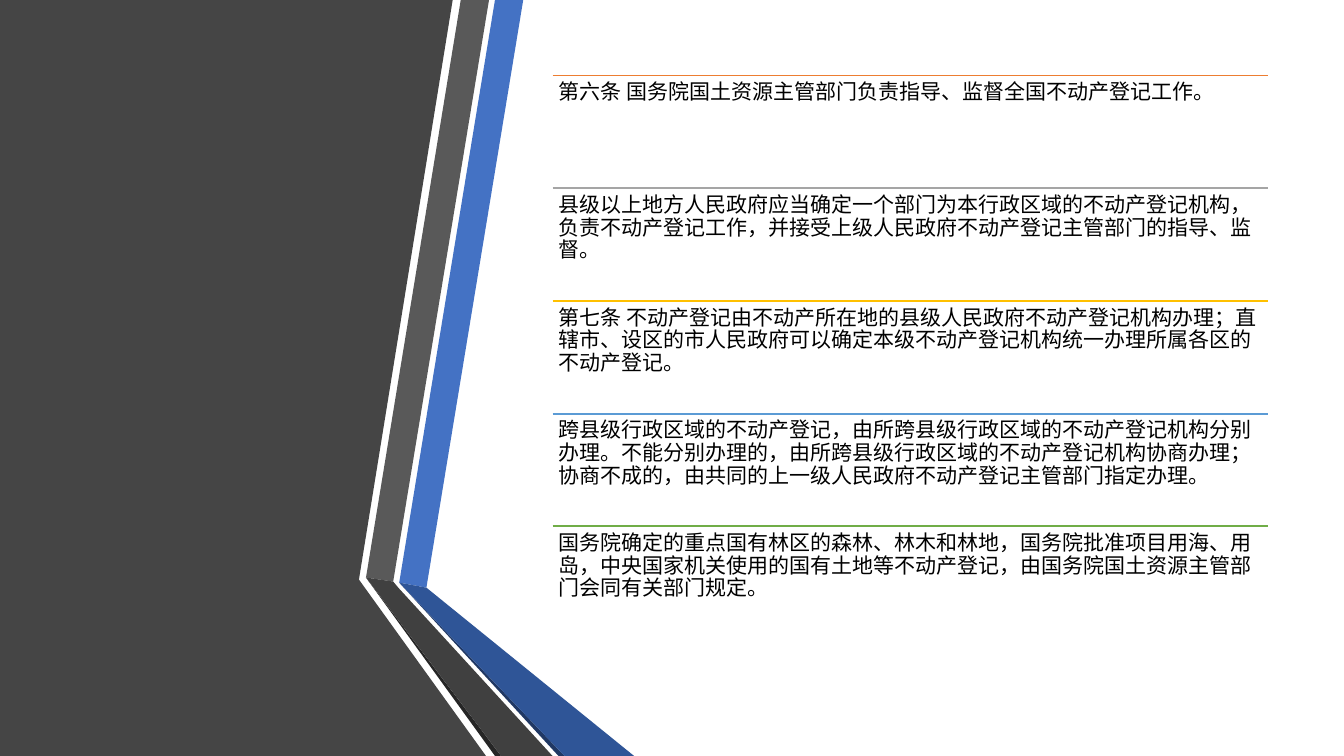
from dataclasses import dataclass

from lxml import etree
from pptx import Presentation
from pptx.dml.color import RGBColor
from pptx.enum.shapes import MSO_CONNECTOR
from pptx.oxml.ns import qn
from pptx.util import Inches, Pt

STRAIGHT = MSO_CONNECTOR.STRAIGHT


@dataclass(frozen=True)
class Theme:
    font: str = "Noto Sans CJK SC"
    text: str = "000000"
    text_size: float = 15
    rule_width: float = 1.25
    line_spacing: float = 0.9
    panel: str = "454545"
    blue: str = "4472C4"
    blue_fold: str = "2F5597"
    blue_edge: str = "203864"
    gray: str = "595959"
    gray_fold: str = "404040"
    gray_edge: str = "262626"


THEME = Theme()
WIDTH, HEIGHT = 13.33, 7.5

ARTICLES = [
    ("ED7D31", "第六条 国务院国土资源主管部门负责指导、监督全国不动产登记工作。"),
    ("A5A5A5", "县级以上地方人民政府应当确定一个部门为本行政区域的不动产登记机构，"
               "负责不动产登记工作，并接受上级人民政府不动产登记主管部门的指导、监督。"),
    ("FFC000", "第七条 不动产登记由不动产所在地的县级人民政府不动产登记机构办理；"
               "直辖市、设区的市人民政府可以确定本级不动产登记机构统一办理所属各区的不动产登记。"),
    ("5B9BD5", "跨县级行政区域的不动产登记，由所跨县级行政区域的不动产登记机构分别办理。"
               "不能分别办理的，由所跨县级行政区域的不动产登记机构协商办理；"
               "协商不成的，由共同的上一级人民政府不动产登记主管部门指定办理。"),
    ("70AD47", "国务院确定的重点国有林区的森林、林木和林地，国务院批准项目用海、用岛，"
               "中央国家机关使用的国有土地等不动产登记，"
               "由国务院国土资源主管部门会同有关部门规定。"),
]

# Corners of the folded ribbons, in inches
GRAY_LEFT, GRAY_RIGHT = (3.63, 5.73), (3.9, 5.77)
BLUE_LEFT, BLUE_RIGHT = (3.96, 5.78), (4.23, 5.83)
GRAY_FOOT, BLUE_FOOT = (4.97, HEIGHT), (5.6, HEIGHT)

RIBBONS = [
    (THEME.panel, [(0, 0), (4.49, 0), (3.56, 5.75), (4.82, HEIGHT), (0, HEIGHT)]),
    (THEME.blue, [BLUE_LEFT, BLUE_RIGHT, (5.19, 0), (4.91, 0)]),
    (THEME.gray, [(4.85, 0), (4.57, 0), GRAY_LEFT, GRAY_RIGHT]),
    (THEME.gray_edge, [GRAY_LEFT, (4.91, HEIGHT), GRAY_FOOT]),
    (THEME.blue_edge, [BLUE_LEFT, (5.54, HEIGHT), BLUE_FOOT]),
    (THEME.blue_fold, [BLUE_LEFT, BLUE_FOOT, (6.29, HEIGHT), BLUE_RIGHT]),
    (THEME.gray_fold, [(5.48, HEIGHT), (3.95, 5.83), GRAY_RIGHT, GRAY_LEFT, GRAY_FOOT]),
]

LIST_LEFT, LIST_TOP, LIST_WIDTH, LIST_HEIGHT = 5.48, 0.75, 7.1, 5.59
ROW_HEIGHT = LIST_HEIGHT / len(ARTICLES)
INSET = 0.06


def add_ribbon(page, color, corners):
    points = [(Inches(x), Inches(y)) for x, y in corners]
    builder = page.shapes.build_freeform(*points[0])
    builder.add_line_segments(points[1:], close=True)
    ribbon = builder.convert_to_shape()
    ribbon.shadow.inherit = False
    ribbon.fill.solid()
    ribbon.fill.fore_color.rgb = RGBColor.from_string(color)
    ribbon.line.fill.background()


def add_rule(page, top, color):
    rule = page.shapes.add_connector(
        STRAIGHT, Inches(LIST_LEFT), Inches(top),
        Inches(LIST_LEFT + LIST_WIDTH), Inches(top))
    rule.line.color.rgb = RGBColor.from_string(color)
    rule.line.width = Pt(THEME.rule_width)
    etree.SubElement(rule._element.spPr, qn("a:effectLst"))


def add_article(page, top, text):
    box = page.shapes.add_textbox(
        Inches(LIST_LEFT), Inches(top), Inches(LIST_WIDTH), Inches(ROW_HEIGHT))
    frame = box.text_frame
    frame.word_wrap = True
    frame.margin_left = frame.margin_right = Inches(INSET)
    frame.margin_top = frame.margin_bottom = Inches(INSET)
    frame.text = text
    para = frame.paragraphs[0]
    para.line_spacing = THEME.line_spacing
    span = para.runs[0]
    span.font.size = Pt(THEME.text_size)
    span.font.color.rgb = RGBColor.from_string(THEME.text)
    span.font.name = THEME.font
    east_asian = etree.SubElement(span.font._element, qn("a:ea"))
    east_asian.set("typeface", THEME.font)


def main():
    deck = Presentation()
    deck.slide_width, deck.slide_height = Inches(WIDTH), Inches(HEIGHT)
    page = deck.slides.add_slide(deck.slide_layouts[6])
    for color, corners in RIBBONS:
        add_ribbon(page, color, corners)
    for row, (color, text) in enumerate(ARTICLES):
        top = LIST_TOP + row * ROW_HEIGHT
        add_rule(page, top, color)
        add_article(page, top, text)
    deck.save("out.pptx")


if __name__ == "__main__":
    main()
